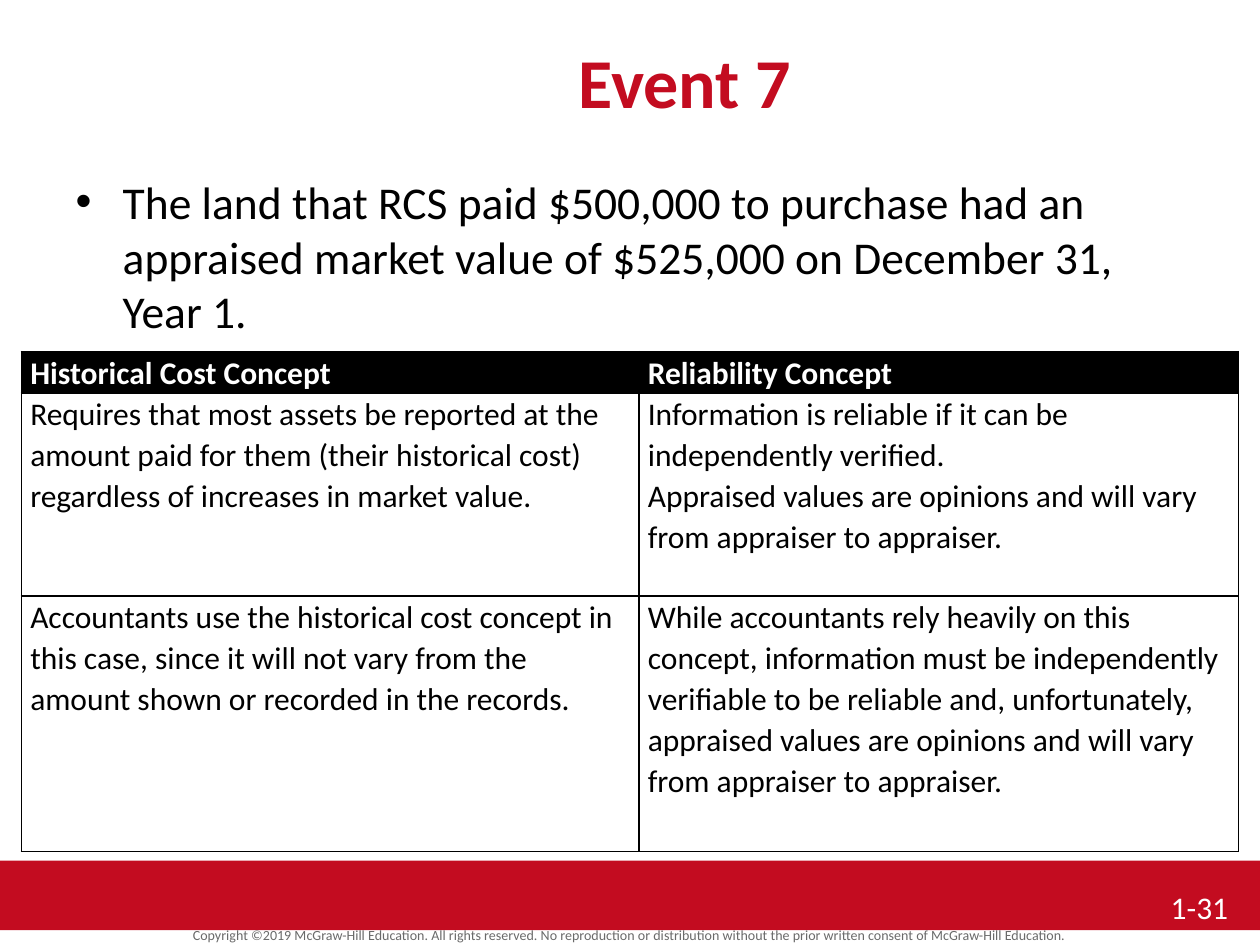
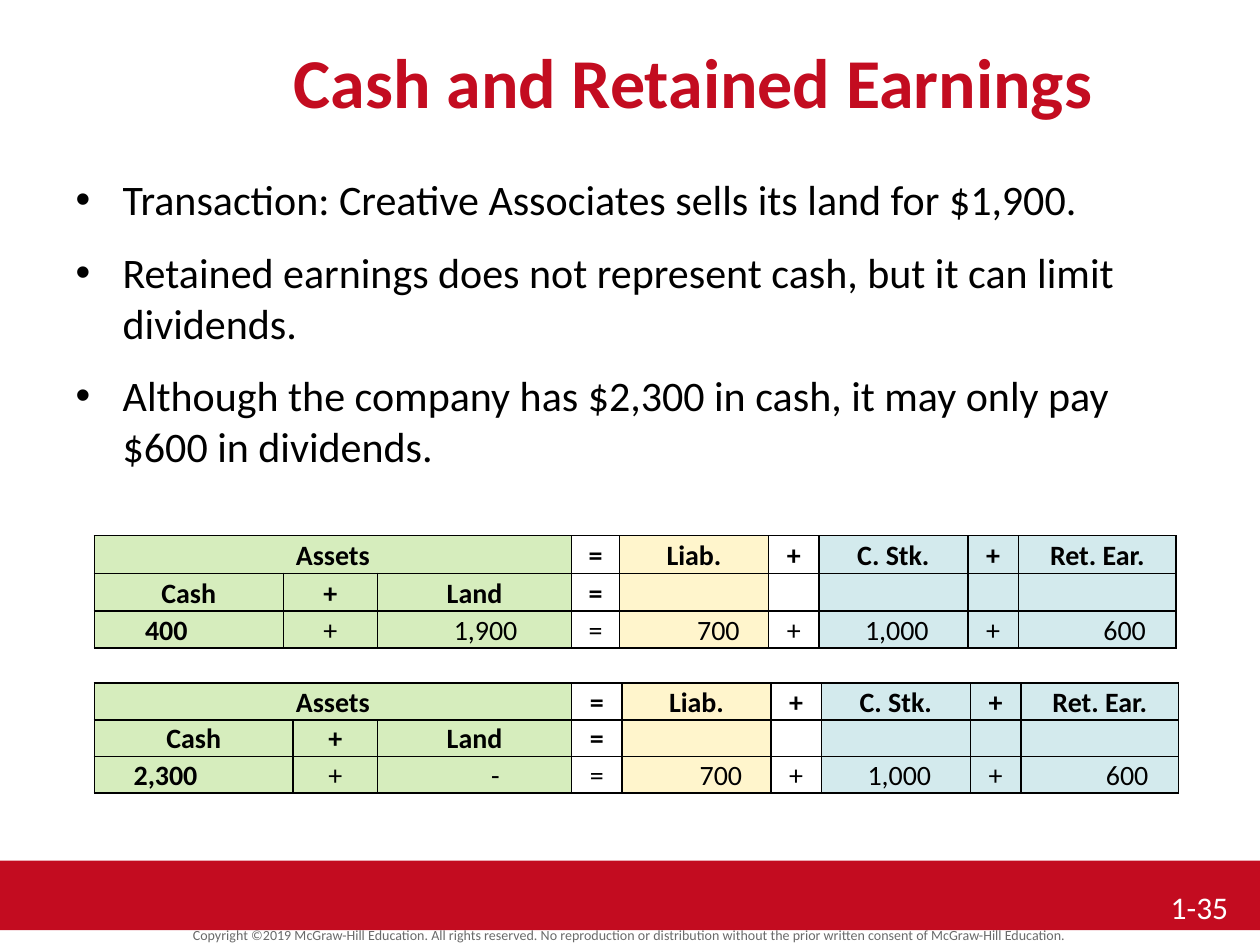
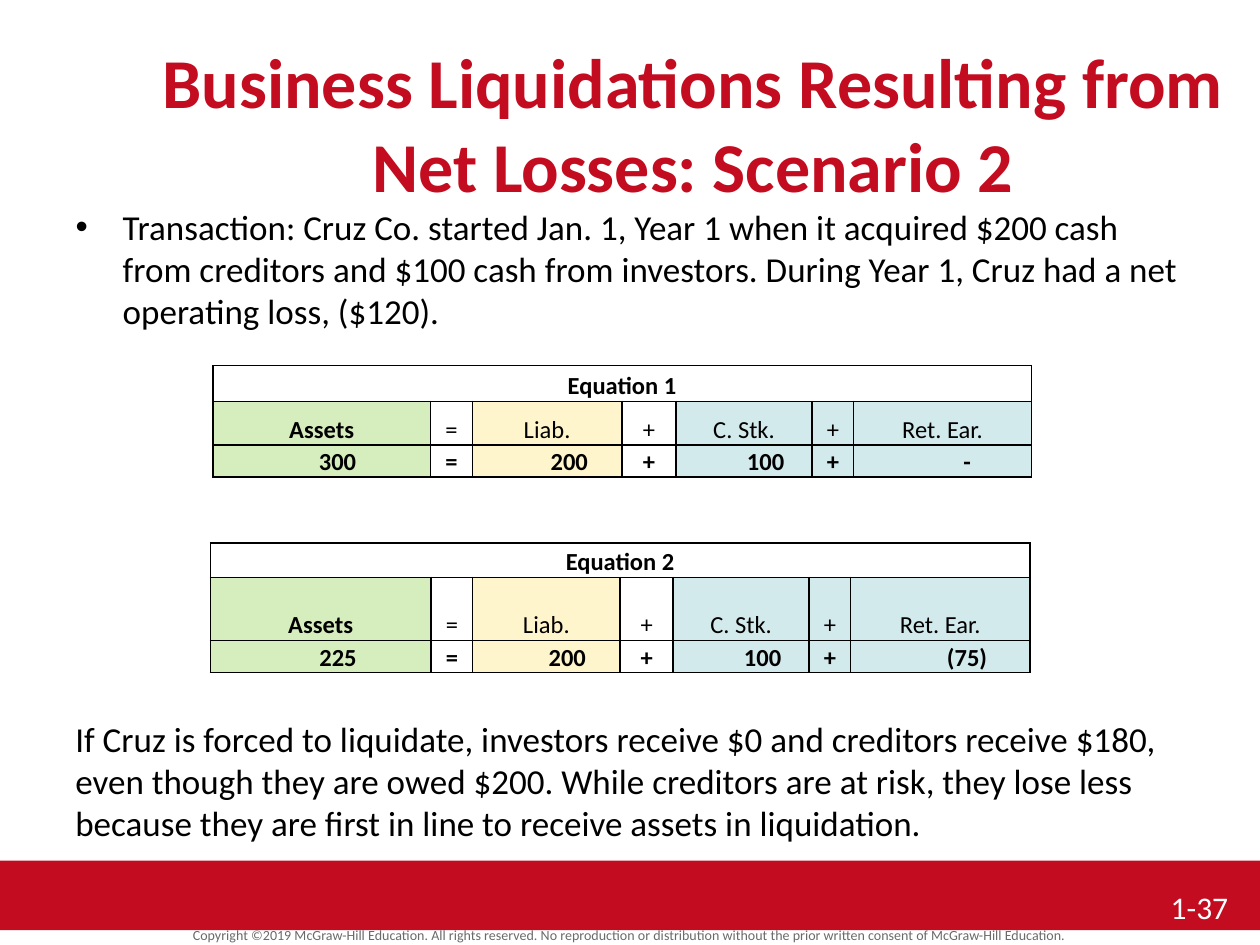
from dataclasses import dataclass, field
from typing import Optional

from lxml.etree import SubElement
from pptx import Presentation
from pptx.dml.color import RGBColor as Color
from pptx.enum.shapes import MSO_SHAPE as Shape
from pptx.enum.text import MSO_ANCHOR as Anchor, MSO_AUTO_SIZE as Auto, PP_ALIGN as Align
from pptx.oxml.ns import qn
from pptx.util import Cm, Pt


# Theme: colours and type sizes
@dataclass(frozen=True)
class Theme:
    font: str = "Calibri"
    red: str = "C30C20"
    black: str = "000000"
    white: str = "FFFFFF"
    grey: str = "6A6A6A"
    green: str = "D6EDBD"
    yellow: str = "FFF5CC"
    blue: str = "D3EAED"
    title: int = 40
    large: int = 26
    medium: int = 24
    small: int = 20
    label: int = 18
    sums: int = 16
    notes: int = 14
    legal: int = 8


T = Theme()
RIGHTS = ("Copyright ©2019 McGraw-Hill Education. All rights reserved. No reproduction "
          "or distribution without the prior written consent of McGraw-Hill Education.")


# Place and size in centimetres
@dataclass(frozen=True)
class Box:
    left: float
    top: float
    wide: float
    high: float

    def lengths(self) -> list:
        return [Cm(n) for n in (self.left, self.top, self.wide, self.high)]


BAND = Box(0, 17.35, 25.4, 1.4)
LEGAL = Box(0, 18.64, 25.4, 0.48)
TITLE = Box(2.54, 0.64, 22.86, 1.7)
NUMBER = Box(23.06, 17.78, 2.34, 1.07)


@dataclass(frozen=True)
class Row:
    high: float
    texts: tuple
    bold: int = 0  # count of leading bold columns
    span: int = 1  # columns joined under the first text
    pads: dict = field(default_factory=dict)  # right inset of aligned sums
    fills: Optional[tuple] = None
    color: str = T.black


@dataclass(frozen=True)
class Grid:
    left: float
    top: float
    cols: tuple
    rows: tuple
    fills: tuple
    size: int
    align: Align = Align.CENTER
    anchor: Anchor = Anchor.BOTTOM


def write(frame, *texts: str, size: int, color: str = T.black, bold: bool = False,
          align: Align = Align.LEFT, line: float = 1.0, before: float = 0,
          after: float = 0, bullet: bool = False) -> None:
    frame.word_wrap = True
    for i, text in enumerate(texts):
        para = frame.add_paragraph() if i else frame.paragraphs[0]
        para.text = text
        para.alignment = align
        para.line_spacing = line
        para.space_before = Pt(before if i else 0)
        para.space_after = Pt(after)
        if bullet:
            props = para._p.get_or_add_pPr()
            props.set("marL", str(Cm(0.95)))
            props.set("indent", str(-Cm(0.95)))
            SubElement(props, qn("a:buChar"), char="•")
        for run in para.runs:
            font = run.font
            font.name, font.size, font.bold = T.font, Pt(size), bold
            font.color.rgb = Color.from_string(color)
        if not text:
            SubElement(para._p, qn("a:endParaRPr"), sz=str(size * 100))


def place(shape, box: Box) -> None:
    shape.left, shape.top, shape.width, shape.height = box.lengths()
    shape.text_frame.auto_size = Auto.NONE
    shape.text_frame.vertical_anchor = Anchor.TOP


def edge(cell) -> None:
    props = cell._tc.get_or_add_tcPr()
    for side in "LRTB":
        line = SubElement(props, qn(f"a:ln{side}"), w=str(Pt(1)))
        fill = SubElement(line, qn("a:solidFill"))
        SubElement(fill, qn("a:srgbClr"), val=T.black)


def paint(cell, color: Optional[str]) -> None:
    if color:
        cell.fill.solid()
        cell.fill.fore_color.rgb = Color.from_string(color)
    else:
        cell.fill.background()


def draw_grid(slide, grid: Grid) -> None:
    area = Box(grid.left, grid.top, sum(grid.cols), sum(r.high for r in grid.rows))
    table = slide.shapes.add_table(len(grid.rows), len(grid.cols), *area.lengths()).table
    table.first_row = table.horz_banding = False
    for col, wide in zip(table.columns, grid.cols):
        col.width = Cm(wide)
    for y, row in enumerate(grid.rows):
        table.rows[y].height = Cm(row.high)
        texts = row.texts[:1] + ("",) * (row.span - 1) + row.texts[1:]
        fills = row.fills or grid.fills
        for x, text in enumerate(texts):
            cell = table.cell(y, x)
            edge(cell)
            paint(cell, fills[x])
            cell.margin_top = cell.margin_bottom = 0
            cell.margin_left = Cm(0.18)
            cell.margin_right = Cm(row.pads.get(x, 0.18))
            cell.vertical_anchor = grid.anchor
            write(cell.text_frame, text, size=grid.size, color=row.color,
                  bold=x < row.bold, line=1.07,
                  align=Align.RIGHT if x in row.pads else grid.align)
        if row.span > 1:
            table.cell(y, 0).merge(table.cell(y, row.span - 1))


# Title, list, band, copyright line and page number
def start(deck, title: str, page: str, area: Box, size: int, *points: str):
    slide = deck.slides.add_slide(deck.slide_layouts[1])
    head, body = slide.placeholders
    place(head, TITLE)
    write(head.text_frame, title, size=T.title, color=T.red, bold=True, align=Align.CENTER)
    place(body, area)
    write(body.text_frame, *points, size=size, before=size / 5, after=8, bullet=True)

    band = slide.shapes.add_shape(Shape.RECTANGLE, *BAND.lengths())
    band.shadow.inherit = False
    band.fill.solid()
    band.fill.fore_color.rgb = Color.from_string(T.red)
    band.line.fill.background()

    legal = slide.shapes.add_textbox(*LEGAL.lengths()).text_frame
    legal.margin_top = legal.margin_bottom = 0
    legal.vertical_anchor = Anchor.MIDDLE
    write(legal, RIGHTS, size=T.legal, color=T.grey, align=Align.CENTER, line=0.8)

    number = slide.shapes.add_textbox(*NUMBER.lengths()).text_frame
    number.margin_right = Cm(0.64)
    write(number, page, size=T.label, color=T.white, align=Align.RIGHT)
    return slide


def concepts(deck) -> None:
    slide = start(deck, "Event 7 ", "1-31", Box(1.27, 3.38, 22.86, 13.13), T.large,
                  "The land that RCS paid $500,000 to purchase had an appraised market "
                  "value of $525,000 on December 31, Year 1.")
    rows = (
        Row(0.83, ("Historical Cost Concept", "Reliability Concept"), bold=2,
            fills=(T.black, T.black), color=T.white),
        Row(4.09, ("Requires that most assets be reported at the amount paid for them "
                   "(their historical cost) regardless of increases in market value.",
                   "Information is reliable if it can be independently verified.\n"
                   "Appraised values are opinions and will vary from appraiser to "
                   "appraiser.")),
        Row(5.16, ("Accountants use the historical cost concept in this case, since it "
                   "will not vary from the amount shown or recorded in the records.",
                   "While accountants rely heavily on this concept, information must be "
                   "independently verifiable to be reliable and, unfortunately, appraised "
                   "values are opinions and will vary from appraiser to appraiser.")),
    )
    draw_grid(slide, Grid(0.43, 7.09, (12.45, 12.09), rows, (None, None), T.label,
                          Align.LEFT, Anchor.TOP))


def dividends(deck) -> None:
    slide = start(deck, "Cash and Retained Earnings", "1-35",
                  Box(1.27, 3.38, 22.86, 13.34), T.medium,
                  "Transaction: Creative Associates sells its land for $1,900.",
                  "Retained earnings does not represent cash, but it can limit dividends.",
                  "Although the company has $2,300 in cash, it may only pay $600 in "
                  "dividends.")
    fills = (T.green,) * 3 + (None, T.yellow, None) + (T.blue,) * 3
    heads = ("Assets", "=", "Liab.", "+", "C. Stk.", "+", "Ret. Ear.")
    parts = ("Cash", "+", "Land", "=") + ("",) * 5
    tail = (3.0, 1.02, 3.0, 1.02, 3.18)
    for top, high, cols, cash, land, inset in (
            (10.8, 0.76, (3.81, 1.9, 3.91, 0.97), "400", "1,900", 1.09),
            (13.77, 0.74, (4.01, 1.7, 3.91, 1.02), "2,300", "-", 1.45)):
        sums = (cash, "+", land, "=", "700", "+", "1,000", "+", "600")
        pads = {0: 1.93, 2: inset, 4: 0.58, 6: 0.79, 8: 0.61}
        rows = (Row(high, heads, bold=9, span=3), Row(high, parts, bold=9),
                Row(0.74, sums, bold=1, pads=pads))
        draw_grid(slide, Grid(1.9, top, cols + tail, rows, fills, T.sums))


def losses(deck) -> None:
    slide = start(deck, "Business Liquidations Resulting from Net Losses: Scenario 2",
                  "1-37", Box(1.27, 4.01, 22.86, 12.5), T.small,
                  "Transaction: Cruz Co. started Jan. 1, Year 1 when it acquired $200 cash "
                  "from creditors and $100 cash from investors. During Year 1, Cruz had a "
                  "net operating loss, ($120).")
    result = slide.shapes.add_textbox(*Box(1.27, 14.33, 22.86, 2.82).lengths())
    write(result.text_frame,
          "If Cruz is forced to liquidate, investors receive $0 and creditors receive "
          "$180, even though they are owed $200. While creditors are at risk, they lose "
          "less because they are first in line to receive assets in liquidation.",
          size=T.small)
    fills = (T.green, None, T.yellow, None) + (T.blue,) * 3
    heads = ("Assets", "=", "Liab.", "+", "C. Stk.", "+", "Ret. Ear.")
    for name, left, top, cols, highs, assets, kept, inset in (
            ("Equation 1", 4.29, 7.37, (4.39, 0.84, 3.02, 1.09, 2.74, 0.84, 3.58),
             (0.72, 0.88), "300", "-", 1.22),
            ("Equation 2", 4.24, 10.95, (4.45, 0.84, 2.97, 1.07, 2.74, 0.84, 3.61),
             (0.69, 1.27), "225", "(75)", 0.86)):
        sums = (assets, "=", "200", "+", "100", "+", kept)
        pads = {0: 1.5, 2: 0.69, 4: 0.56, 6: inset}
        rows = (Row(highs[0], (name,), bold=7, span=7, fills=(None,) * 7),
                Row(highs[1], heads, bold=1), Row(0.65, sums, bold=7, pads=pads))
        draw_grid(slide, Grid(left, top, cols, rows, fills, T.notes))


def main() -> None:
    deck = Presentation()
    deck.slide_width, deck.slide_height = Cm(25.4), Cm(19.05)
    for build in (concepts, dividends, losses):
        build(deck)
    deck.save("out.pptx")


if __name__ == "__main__":
    main()
